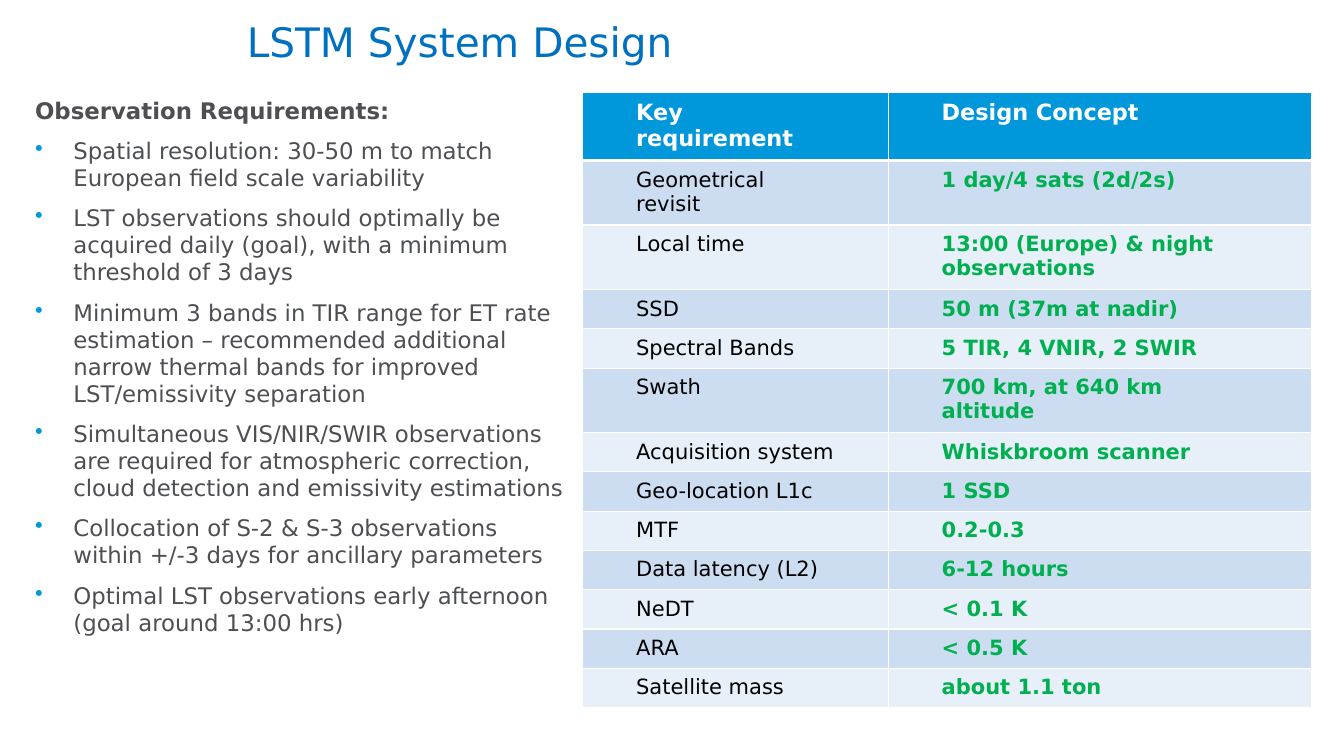
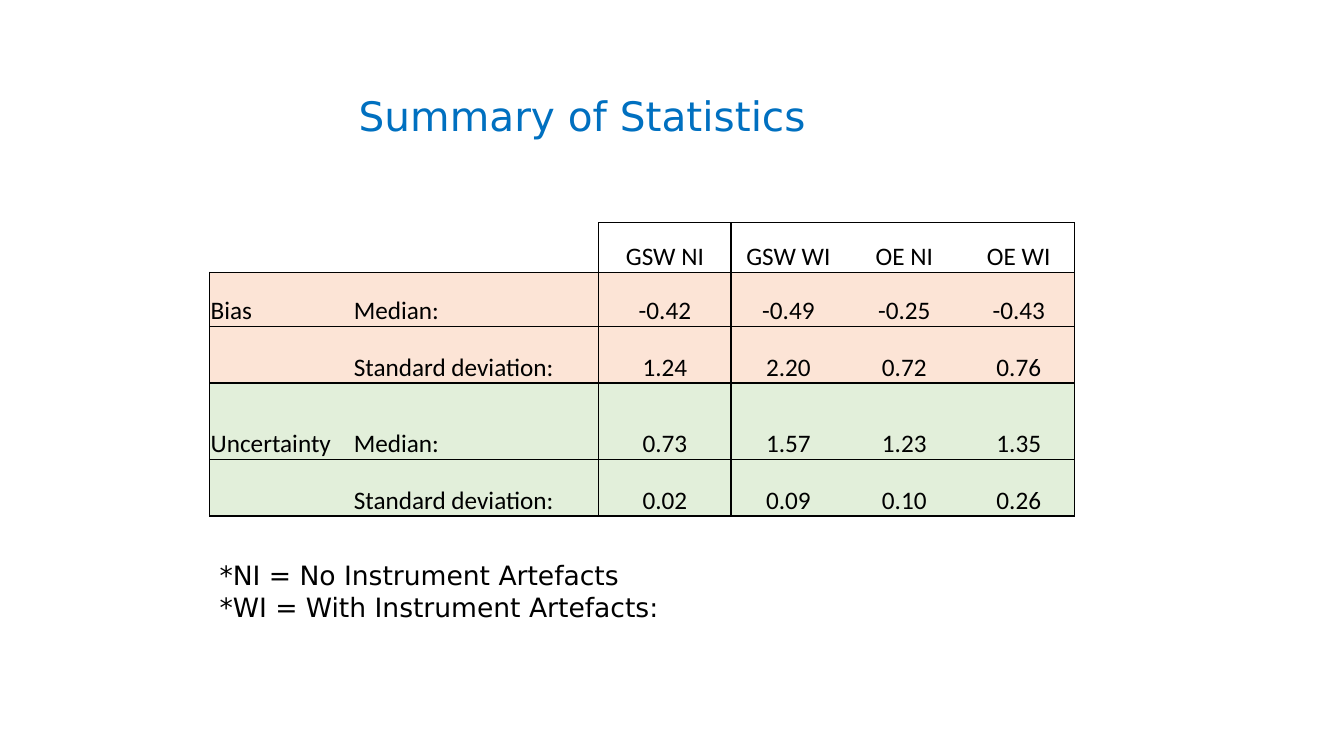
from lxml.etree import SubElement
from pptx import Presentation
from pptx.dml.color import RGBColor
from pptx.enum.shapes import MSO_SHAPE
from pptx.enum.text import MSO_ANCHOR, PP_ALIGN
from pptx.oxml import parse_xml
from pptx.oxml.ns import nsdecls, qn
from pptx.util import Emu, Pt

PX = 9144
BODY_FONT = "DejaVu Sans"
STATS_FONT = "Calibri"
PLAIN_TABLE = "{2D5ABB26-0587-4C30-8999-92F81FD0307C}"

WHITE = RGBColor(0xFF, 0xFF, 0xFF)
BLACK = RGBColor(0x00, 0x00, 0x00)
TITLE_BLUE = RGBColor(0x00, 0x70, 0xC0)
HEADER_BLUE = RGBColor(0x00, 0x98, 0xDB)
BAND_DARK = RGBColor(0xCC, 0xDD, 0xF1)
BAND_LIGHT = RGBColor(0xE7, 0xEF, 0xF8)
GREEN = RGBColor(0x00, 0xB0, 0x50)
GREY = RGBColor(0x4D, 0x4F, 0x53)
PEACH = RGBColor(0xFC, 0xE4, 0xD6)
MINT = RGBColor(0xE2, 0xEF, 0xDA)

OBSERVATIONS = [
    "Spatial resolution: 30-50 m to match European field scale variability",
    "LST observations should optimally be acquired daily (goal), with a minimum threshold of 3 days",
    "Minimum 3 bands in TIR range for ET rate estimation – recommended additional narrow "
    "thermal bands for improved LST/emissivity separation",
    "Simultaneous VIS/NIR/SWIR observations are required for atmospheric correction, "
    "cloud detection and emissivity estimations",
    "Collocation of S-2 & S-3 observations within +/-3 days for ancillary parameters",
    "Optimal LST observations early afternoon (goal around 13:00 hrs)",
]

HEADER_HEIGHT, WRAPPED, SINGLE = 63, 62, 38
DESIGN = [
    ("Key requirement", "Design Concept", HEADER_HEIGHT),
    ("Geometrical revisit", "1 day/4 sats (2d/2s)", WRAPPED),
    ("Local time", "13:00 (Europe) & night observations", WRAPPED),
    ("SSD", "50 m (37m at nadir)", SINGLE),
    ("Spectral Bands", "5 TIR, 4 VNIR, 2 SWIR", SINGLE),
    ("Swath", "700 km, at 640 km altitude", WRAPPED),
    ("Acquisition system", "Whiskbroom scanner", SINGLE),
    ("Geo-location L1c", "1 SSD", SINGLE),
    ("MTF", "0.2-0.3", SINGLE),
    ("Data latency (L2)", "6-12 hours", SINGLE),
    ("NeDT", "< 0.1 K", SINGLE),
    ("ARA", "< 0.5 K", SINGLE),
    ("Satellite mass", "about 1.1 ton", SINGLE),
]

STATISTICS = [
    ("", "", "GSW NI", "GSW WI", "OE NI", "OE WI"),
    ("Bias", "Median:", "-0.42", "-0.49", "-0.25", "-0.43"),
    ("", "Standard deviation:", "1.24", "2.20", "0.72", "0.76"),
    ("Uncertainty", "Median:", "0.73", "1.57", "1.23", "1.35"),
    ("", "Standard deviation:", "0.02", "0.09", "0.10", "0.26"),
]
STATISTICS_BLOCKS = [
    (range(0, 1), range(2, 6), None),
    (range(1, 3), range(0, 2), PEACH),
    (range(1, 3), range(2, 6), PEACH),
    (range(3, 5), range(0, 2), MINT),
    (range(3, 5), range(2, 6), MINT),
]


def px(*lengths):
    """Turn px lengths into EMU."""
    return [Emu(length * PX) for length in lengths]


def write_text(frame, text, *, size, color, font=BODY_FONT, bold=False, align=PP_ALIGN.LEFT):
    """Write one paragraph, in the empty first one or after the last, and return it."""
    paragraph = frame.paragraphs[0] if not frame.text else frame.add_paragraph()
    paragraph.alignment = align
    run = paragraph.add_run()
    run.text = text
    run.font.name = font
    run.font.size = Pt(size)
    run.font.bold = bold
    run.font.color.rgb = color
    return paragraph


def add_bullet(paragraph, color, indent):
    """Give a paragraph a coloured bullet with a hanging indent."""
    properties = paragraph._p.get_or_add_pPr()
    properties.set("marL", str(indent * PX))
    properties.set("indent", str(-indent * PX))
    bullet_color = SubElement(properties, qn("a:buClr"))
    SubElement(bullet_color, qn("a:srgbClr"), val=str(color))
    SubElement(properties, qn("a:buChar"), char="•")


def add_textbox(slide, left, top, width, height, anchor=MSO_ANCHOR.TOP):
    """Add a wrapping text box and return its text frame."""
    frame = slide.shapes.add_textbox(*px(left, top, width, height)).text_frame
    frame.word_wrap = True
    frame.vertical_anchor = anchor
    return frame


def add_title(slide, text, left, top):
    """Add the slide title."""
    frame = add_textbox(slide, left, top, 810, 59, MSO_ANCHOR.MIDDLE)
    write_text(frame, text, size=29, color=TITLE_BLUE)


def add_plain_table(slide, left, top, widths, heights):
    """Add a table without built-in style and return it."""
    table = slide.shapes.add_table(
        len(heights), len(widths), *px(left, top, sum(widths), sum(heights))
    ).table
    table.horz_banding = False
    table._tbl.tblPr.find(qn("a:tableStyleId")).text = PLAIN_TABLE
    for column, width in zip(table.columns, px(*widths)):
        column.width = width
    for row, height in zip(table.rows, px(*heights)):
        row.height = height
    return table


def set_margins(cell, left, top, right, bottom):
    """Set the inner margins of a cell."""
    cell.margin_left, cell.margin_top, cell.margin_right, cell.margin_bottom = px(
        left, top, right, bottom
    )


def fill_cell(cell, color):
    """Fill a cell, or leave it clear when there is no color."""
    if color is None:
        cell.fill.background()
    else:
        cell.fill.solid()
        cell.fill.fore_color.rgb = color


def add_borders(cell, color, widths):
    """Draw cell borders from a mapping of side letters to widths in points."""
    properties = cell._tc.get_or_add_tcPr()
    sides = [side for side in "LRTB" if side in widths]
    for position, side in enumerate(sides):
        properties.insert(position, parse_xml(
            f'<a:ln{side} {nsdecls("a")} w="{Pt(widths[side])}"><a:solidFill>'
            f'<a:srgbClr val="{color}"/></a:solidFill></a:ln{side}>'
        ))


def outline_block(table, rows, columns, color):
    """Fill a block of cells and draw a line around it."""
    for row in rows:
        for column in columns:
            cell = table.cell(row, column)
            fill_cell(cell, color)
            edges = {
                "L": column == columns[0],
                "R": column == columns[-1],
                "T": row == rows[0],
                "B": row == rows[-1],
            }
            add_borders(cell, BLACK, {side: 1 for side, on_edge in edges.items() if on_edge})


def add_design_table(slide):
    """Add the table of key requirements and design concepts."""
    heights = [height for _, _, height in DESIGN]
    table = add_plain_table(slide, 578, 92, [303, 420], heights)
    for row, (requirement, concept, _) in enumerate(DESIGN):
        header = row == 0
        band = HEADER_BLUE if header else BAND_DARK if row % 2 else BAND_LIGHT
        for column, text in enumerate((requirement, concept)):
            cell = table.cell(row, column)
            set_margins(cell, 53, 7, 53, 7)
            fill_cell(cell, band)
            add_borders(cell, WHITE, {"L": 1, "R": 1, "T": 1, "B": 3 if header else 1})
            write_text(
                cell.text_frame, text,
                size=16 if header else 15,
                color=WHITE if header else GREEN if column else BLACK,
                bold=header or column == 1,
            )


def add_observations(slide):
    """Add the panel of observation requirements."""
    panel = slide.shapes.add_shape(MSO_SHAPE.RECTANGLE, *px(25, 92, 553, 570))
    panel.shadow.inherit = False
    panel.fill.solid()
    panel.fill.fore_color.rgb = WHITE
    panel.line.fill.background()
    frame = panel.text_frame
    frame.word_wrap = True
    frame.vertical_anchor = MSO_ANCHOR.TOP
    write_text(frame, "Observation Requirements:", size=16.3, color=GREY, bold=True)
    for observation in OBSERVATIONS:
        paragraph = write_text(frame, observation, size=16.3, color=GREY)
        add_bullet(paragraph, HEADER_BLUE, 38)
        paragraph.space_before = Pt(3.3)
    for paragraph in frame.paragraphs:
        paragraph.line_spacing = 0.99
        paragraph.space_after = Pt(6)


def add_statistics_table(slide):
    """Add the table of bias and uncertainty statistics."""
    table = add_plain_table(
        slide, 208, 221, [142, 244, 131, 114, 116, 111], [49, 54, 56, 76, 56]
    )
    for row, texts in enumerate(STATISTICS):
        for column, text in enumerate(texts):
            cell = table.cell(row, column)
            set_margins(cell, 1, 1, 1, 0)
            cell.vertical_anchor = MSO_ANCHOR.BOTTOM
            if text:
                write_text(
                    cell.text_frame, text, size=18, color=BLACK, font=STATS_FONT,
                    align=PP_ALIGN.CENTER if column > 1 else PP_ALIGN.LEFT,
                )
    for column in range(2):
        fill_cell(table.cell(0, column), None)
    for rows, columns, color in STATISTICS_BLOCKS:
        outline_block(table, rows, columns, color)


def add_design_slide(slide):
    """Build the system design slide."""
    add_title(slide, "LSTM System Design", 235, 11)
    add_design_table(slide)
    add_observations(slide)


def add_statistics_slide(slide):
    """Build the statistics slide."""
    add_title(slide, "Summary of Statistics", 346, 85)
    add_statistics_table(slide)
    legend = add_textbox(slide, 208, 550, 917, 106)
    for line in ("*NI = No Instrument Artefacts", "*WI = With Instrument Artefacts:"):
        write_text(legend, line, size=19, color=BLACK)


def main():
    """Build and save the presentation."""
    presentation = Presentation()
    presentation.slide_width, presentation.slide_height = px(1333, 750)
    blank = presentation.slide_layouts[6]
    for build in (add_design_slide, add_statistics_slide):
        build(presentation.slides.add_slide(blank))
    presentation.save("out.pptx")


if __name__ == "__main__":
    main()
